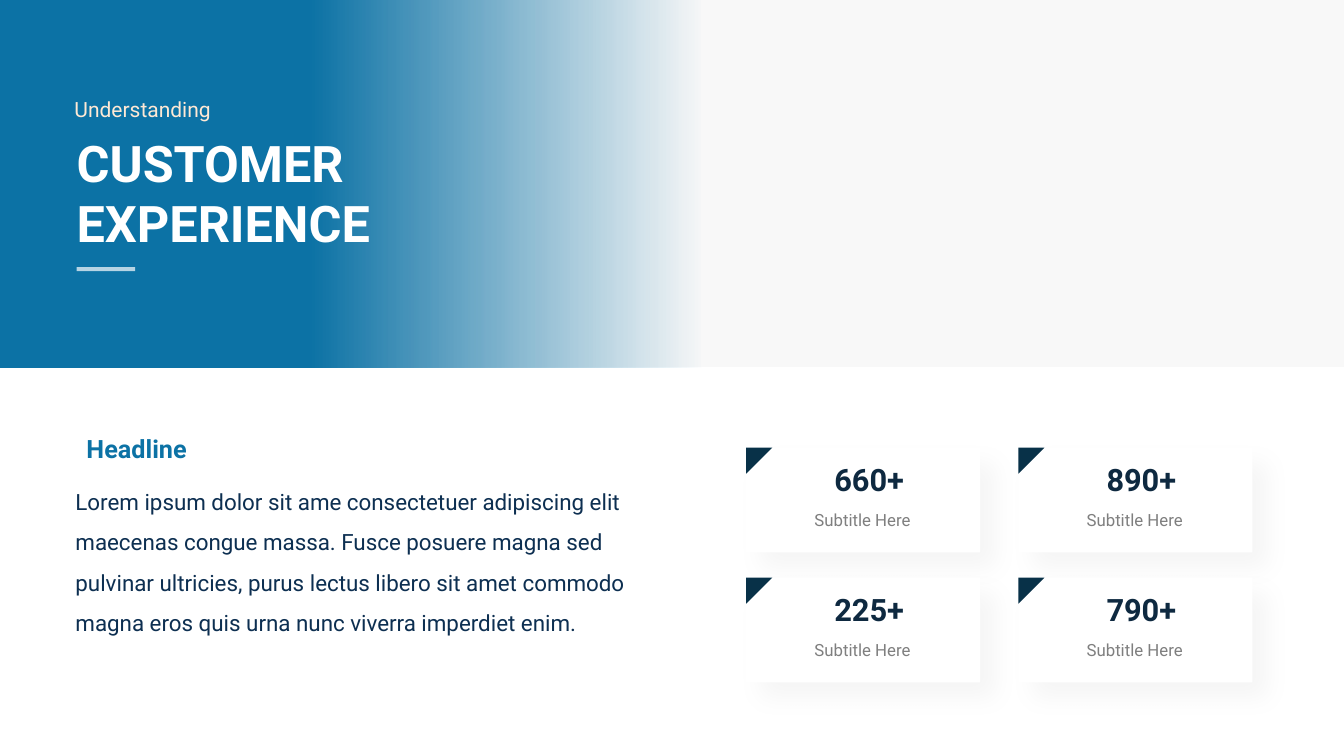
from lxml import etree
from pptx import Presentation
from pptx.dml.color import RGBColor
from pptx.enum.shapes import MSO_CONNECTOR as Connector, MSO_SHAPE as Shape
from pptx.enum.text import MSO_ANCHOR as Anchor, MSO_AUTO_SIZE as AutoSize, PP_ALIGN as Align
from pptx.oxml.ns import qn
from pptx.util import Inches, Pt

FONT = "Roboto"
COLORS = {
    "blue": "0C72A5",
    "navy": "083148",
    "number": "0E2940",
    "body": "0D2F51",
    "gray": "7F7F7F",
    "pale": "F2F2F2",
    "cream": "FFE9D5",
    "white": "FFFFFF",
    "black": "000000",
}
BODY = (
    "Lorem ipsum dolor sit ame consectetuer adipiscing elit maecenas congue massa. "
    "Fusce posuere magna sed pulvinar ultricies, purus lectus libero sit amet commodo "
    "magna eros quis urna nunc viverra imperdiet enim."
)
# Card numbers, row by row
CARD_NUMBERS = [["660+", "890+"], ["225+", "790+"]]
CARD_LEFT, CARD_TOP = 7.4, 4.44
CARD_WIDTH, CARD_HEIGHT = 2.32, 1.04
CARD_STEP_X, CARD_STEP_Y = 2.7, 1.29
CORNER = 0.26


def rgb(name):
    return RGBColor.from_string(COLORS[name])


def set_alpha(color_element, percent):
    alpha = etree.SubElement(color_element, qn("a:alpha"))
    alpha.set("val", str(percent * 1000))


def fill_plain(shape, color):
    shape.fill.solid()
    shape.fill.fore_color.rgb = rgb(color)
    shape.line.fill.background()
    shape.shadow.inherit = False


def add_block(slide, kind, left, top, width, height, color):
    shape = slide.shapes.add_shape(
        kind, Inches(left), Inches(top), Inches(width), Inches(height)
    )
    fill_plain(shape, color)
    return shape


def format_text(shape, text, size, color, bold=False, align=Align.LEFT, spacing=1.0):
    frame = shape.text_frame
    frame.text = text
    frame.word_wrap = True
    frame.auto_size = AutoSize.SHAPE_TO_FIT_TEXT
    frame.vertical_anchor = Anchor.TOP
    for paragraph in frame.paragraphs:
        paragraph.alignment = align
        paragraph.line_spacing = spacing
        for run in paragraph.runs:
            run.font.name = FONT
            run.font.size = Pt(size)
            run.font.bold = bold
            run.font.color.rgb = rgb(color)


def add_text(slide, left, top, width, height, text, size, color, **style):
    box = slide.shapes.add_textbox(
        Inches(left), Inches(top), Inches(width), Inches(height)
    )
    format_text(box, text, size, color, **style)


def add_banner(slide):
    backdrop = add_block(slide, Shape.RECTANGLE, 0, 0, 13.33, 3.64, "pale")
    set_alpha(backdrop.element.find(".//" + qn("a:srgbClr")), 49)

    # Blue fading out to the right
    fade = add_block(slide, Shape.RECTANGLE, 0, 0, 6.96, 3.65, "blue")
    fade.fill.gradient()
    fade.fill.gradient_angle = 0
    for stop, position in zip(fade.fill.gradient_stops, (0.44, 1)):
        stop.color.rgb = rgb("blue")
        stop.position = position
    set_alpha(fade.element.findall(".//" + qn("a:srgbClr"))[-1], 0)


def add_title(slide):
    title = slide.shapes.title
    title.left, title.top = Inches(0.66), Inches(1.26)
    title.width, title.height = Inches(4.85), Inches(1.31)
    format_text(title, "CUSTOMER\nEXPERIENCE", 36, "white", bold=True)
    # Bring the title in front of the banner
    title.element.getparent().append(title.element)


def add_rule(slide, left, right, top):
    rule = slide.shapes.add_connector(
        Connector.STRAIGHT, Inches(left), Inches(top), Inches(right), Inches(top)
    )
    rule.line.width = Pt(3)
    rule.line.color.rgb = rgb("white")
    properties = rule.element.spPr
    set_alpha(properties.find(".//" + qn("a:srgbClr")), 69)
    etree.SubElement(properties, qn("a:effectLst"))


def add_soft_shadow(shape):
    effects = shape.element.spPr.find(qn("a:effectLst"))
    shadow = etree.SubElement(effects, qn("a:outerShdw"))
    shadow.set("blurRad", str(Pt(18)))
    shadow.set("dist", str(Pt(15)))
    shadow.set("dir", str(45 * 60000))
    shadow.set("algn", "tl")
    shadow.set("rotWithShape", "0")
    color = etree.SubElement(shadow, qn("a:srgbClr"))
    color.set("val", COLORS["black"])
    set_alpha(color, 4)


def add_corner(slide, left, top):
    x, y, side = Inches(left), Inches(top), Inches(CORNER)
    builder = slide.shapes.build_freeform(x + side, y)
    builder.add_line_segments([(x, y + side), (x, y)], close=True)
    fill_plain(builder.convert_to_shape(), "navy")


def add_card(slide, left, top, number):
    card = add_block(
        slide, Shape.ROUNDED_RECTANGLE, left, top, CARD_WIDTH, CARD_HEIGHT, "white"
    )
    card.adjustments[0] = 0
    add_soft_shadow(card)
    add_text(slide, left + 0.34, top + 0.57, 1.63, 0.3, "Subtitle Here", 12, "gray",
             align=Align.CENTER)
    add_text(slide, left + 0.53, top + 0.08, 1.38, 0.47, number, 22, "number",
             bold=True, align=Align.CENTER)
    add_corner(slide, left, top)


def main():
    presentation = Presentation()
    presentation.slide_width = Inches(13.33)
    presentation.slide_height = Inches(7.5)
    slide = presentation.slides.add_slide(presentation.slide_layouts[5])

    # Banner with title
    add_banner(slide)
    add_title(slide)
    add_text(slide, 0.64, 0.91, 2.57, 0.35, "Understanding", 15, "cream")
    add_rule(slide, 0.76, 1.34, 2.67)

    # Headline and body
    add_text(slide, 0.76, 4.25, 4.3, 0.4, "Headline", 18, "blue", bold=True)
    add_text(slide, 0.65, 4.66, 5.92, 1.72, BODY, 16, "body", spacing=1.5)

    # Grid of figures
    for row, numbers in enumerate(CARD_NUMBERS):
        for column, number in enumerate(numbers):
            add_card(slide, CARD_LEFT + column * CARD_STEP_X,
                     CARD_TOP + row * CARD_STEP_Y, number)

    presentation.save("out.pptx")


if __name__ == "__main__":
    main()
